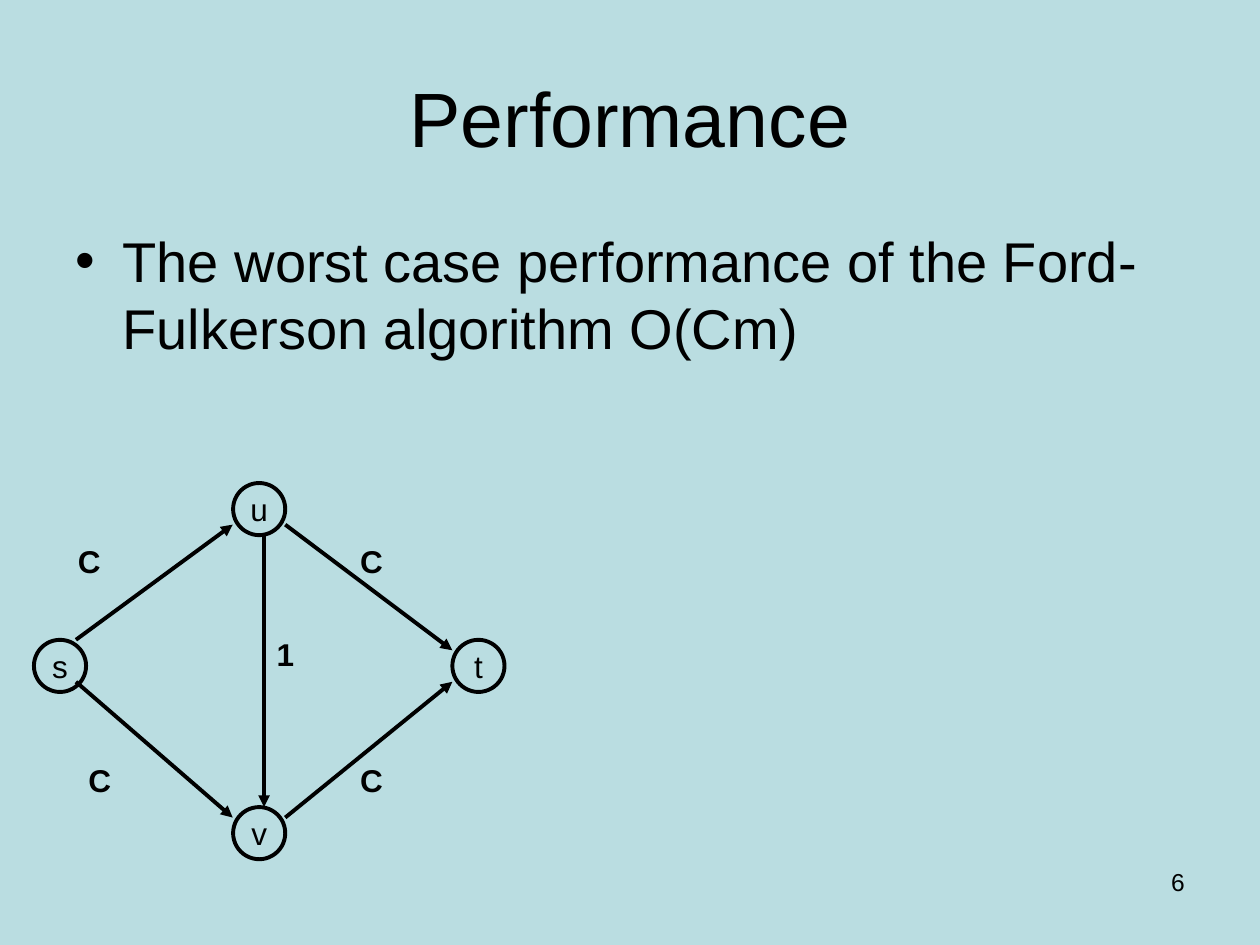
from lxml import etree
from pptx import Presentation
from pptx.dml.color import RGBColor
from pptx.enum.shapes import MSO_CONNECTOR, MSO_SHAPE
from pptx.enum.text import MSO_ANCHOR, PP_ALIGN
from pptx.oxml.ns import qn
from pptx.util import Pt

LEFT, CENTER, RIGHT = PP_ALIGN.LEFT, PP_ALIGN.CENTER, PP_ALIGN.RIGHT
TOP, MIDDLE = MSO_ANCHOR.TOP, MSO_ANCHOR.MIDDLE
OVAL, STRAIGHT = MSO_SHAPE.OVAL, MSO_CONNECTOR.STRAIGHT

# Content; all lengths are in points
COLORS = {"background": "BADDE1", "ink": "000000"}
NODE_SIZE, LINE_WIDTH, LABEL_HEIGHT = 29.8, 2.25, 28.8
BULLET_INDENT = 27

# (text, (left, top, width, height), text format)
TEXTS = [
    ("Performance", (36, 21.6, 648, 90),
     {"size": 44, "align": CENTER, "anchor": MIDDLE}),
    ("The worst case performance of the Ford-Fulkerson algorithm O(Cm)",
     (36, 126, 648, 108), {"size": 32, "before": 2, "bullet": "•"}),
    ("6", (516, 492, 168, 37.2), {"size": 14, "align": RIGHT}),
]
NODES = {"u": (133.2, 276), "s": (19.4, 365.6),
         "t": (258.5, 365.6), "v": (133.2, 461.2)}
# Edges: (start, end)
EDGES = [
    ((43.4, 365.6), (133, 299.8)),   # s to u
    ((43.4, 389.6), (133, 467.2)),   # s to v
    ((150.9, 306), (150.9, 461.2)),  # u to v
    ((163, 299.8), (258.5, 371.6)),  # u to t
    ((163, 467.2), (258.5, 389.6)),  # v to t
]
# Capacities: (text, left, top, width)
CAPACITIES = [
    ("C", 37.4, 306, 78),
    ("C", 198.7, 431.4, 78),
    ("1", 151, 359.6, 66),
    ("C", 198.7, 306, 72),
    ("C", 43.4, 431.4, 60),
]


def color(name):
    return RGBColor.from_string(COLORS[name])


def write(shape, text, size, align=LEFT, anchor=TOP, bold=False,
          before=0, bullet=None, wrap=True):
    frame = shape.text_frame
    frame.word_wrap, frame.vertical_anchor = wrap, anchor
    paragraph = frame.paragraphs[0]
    paragraph.alignment, paragraph.space_before = align, Pt(before)
    run = paragraph.add_run()
    run.text = text
    font_format = {"name": "Arial", "size": Pt(size), "bold": bold}
    for attribute, value in font_format.items():
        setattr(run.font, attribute, value)
    run.font.color.rgb = color("ink")
    if bullet:
        properties = paragraph._p.get_or_add_pPr()
        properties.set("marL", str(Pt(BULLET_INDENT)))
        properties.set("indent", str(-Pt(BULLET_INDENT)))
        etree.SubElement(properties, qn("a:buFont"), typeface="Arial")
        etree.SubElement(properties, qn("a:buChar"), char=bullet)


def style_line(line):
    line.color.rgb = color("ink")
    line.width = Pt(LINE_WIDTH)


def add_text(slide, text, box, **text_format):
    shape = slide.shapes.add_textbox(*map(Pt, box))
    write(shape, text, **text_format)


def add_node(slide, name, left, top):
    shape = slide.shapes.add_shape(
        OVAL, *map(Pt, (left, top, NODE_SIZE, NODE_SIZE)))
    shape.shadow.inherit = False
    shape.fill.background()
    style_line(shape.line)
    write(shape, name, 18, align=CENTER, anchor=MIDDLE, wrap=False)


def add_edge(slide, start, end):
    connector = slide.shapes.add_connector(STRAIGHT, *map(Pt, start + end))
    style_line(connector.line)
    etree.SubElement(connector.line._get_or_add_ln(), qn("a:tailEnd"),
                     type="triangle")
    etree.SubElement(connector._element.spPr, qn("a:effectLst"))


def main():
    presentation = Presentation()
    presentation.slide_width, presentation.slide_height = Pt(720), Pt(540)
    slide = presentation.slides.add_slide(presentation.slide_layouts[6])
    slide.background.fill.solid()
    slide.background.fill.fore_color.rgb = color("background")

    # Title, bullet and slide number
    for text, box, text_format in TEXTS:
        add_text(slide, text, box, **text_format)

    # Flow network
    for name, position in NODES.items():
        add_node(slide, name, *position)
    for start, end in EDGES:
        add_edge(slide, start, end)
    for text, left, top, width in CAPACITIES:
        add_text(slide, text, (left, top, width, LABEL_HEIGHT),
                 size=18, bold=True, before=1)

    presentation.save("out.pptx")


if __name__ == "__main__":
    main()
